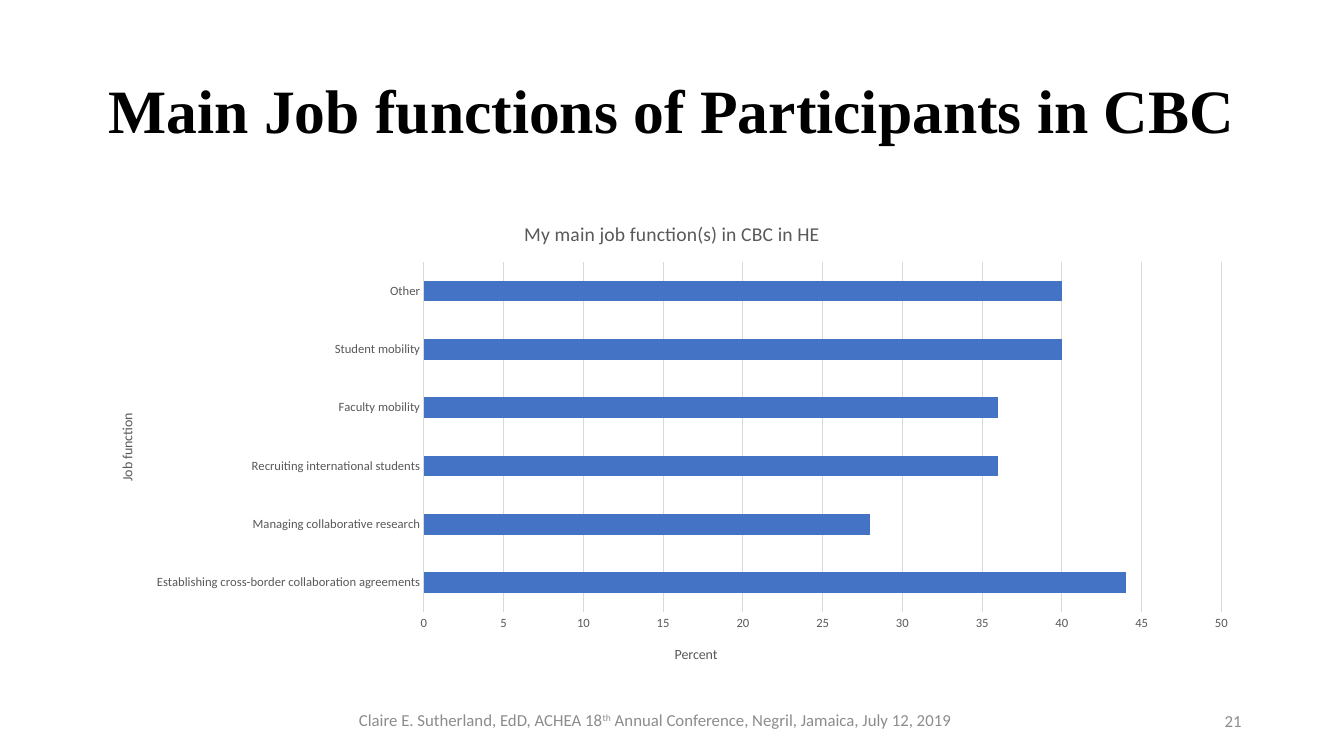
from dataclasses import dataclass

import pptx
import pptx.chart.data
import pptx.dml.color
import pptx.enum.chart
import pptx.enum.text
import pptx.oxml
import pptx.oxml.ns
import pptx.util

Pt = pptx.util.Pt
RGB = pptx.dml.color.RGBColor
Align = pptx.enum.text.PP_ALIGN
qn = pptx.oxml.ns.qn

BLACK = RGB(0x00, 0x00, 0x00)
INK = RGB(0x59, 0x59, 0x59)
GREY = RGB(0x8C, 0x8C, 0x8C)
GRID = RGB(0xD9, 0xD9, 0xD9)
BLUE = RGB(0x44, 0x72, 0xC4)

JOBS = {
    "Establishing cross-border collaboration agreements": 44,
    "Managing collaborative research": 28,
    "Recruiting international students": 36,
    "Faculty mobility": 36,
    "Student mobility": 40,
    "Other": 40,
}


@dataclass
class Label:
    text: str
    left: float
    top: float
    width: float
    height: float
    size: float
    font: str = "Calibri"
    color: RGB = GREY
    bold: bool = False
    align: Align = Align.CENTER
    inset: float = 3.6
    space: float = 1.0


LABELS = [
    Label("Main Job functions of Participants in CBC", 66, 28.8, 828, 104.4, 44,
          font="Times New Roman", color=BLACK, bold=True, space=0.9),
    Label("Claire E. Sutherland, EdD, ACHEA 18^th^ Annual Conference, "
          "Negril, Jamaica, July 12, 2019", 98, 484.6, 740, 44.6, 12, inset=18),
    Label("21", 678, 500.4, 216, 28.8, 12, align=Align.RIGHT),
]


def write(frame, text: str, *, size: float, font: str = "Calibri",
          color: RGB = INK, bold: bool = False,
          align: Align = Align.CENTER, space: float = 1.0) -> None:
    """Fill the first paragraph; text between carets is raised."""
    para = frame.paragraphs[0]
    para.alignment = align
    para.line_spacing = space
    for i, part in enumerate(text.split("^")):
        run = para.add_run()
        run.text = part
        run.font.size = Pt(size)
        run.font.name = font
        run.font.bold = bold
        run.font.color.rgb = color
        if i % 2:
            run._r.get_or_add_rPr().set("baseline", "30000")


def draw(slide, label: Label) -> None:
    box = slide.shapes.add_textbox(
        Pt(label.left), Pt(label.top), Pt(label.width), Pt(label.height))
    frame = box.text_frame
    frame.word_wrap = True
    frame.vertical_anchor = pptx.enum.text.MSO_ANCHOR.MIDDLE
    frame.margin_top = Pt(label.inset)
    write(frame, label.text, size=label.size, font=label.font, color=label.color,
          bold=label.bold, align=label.align, space=label.space)


def place(node, **parts: float) -> None:
    """Pin a chart part at fractions of the chart's size."""
    for old in node.findall(qn("c:layout")):
        node.remove(old)
    modes = {"xMode": "edge", "yMode": "edge"}
    if "w" in parts:
        modes = {"layoutTarget": "inner"} | modes
    body = "".join(f'<c:{tag} val="{val}"/>' for tag, val in (modes | parts).items())
    layout = pptx.oxml.parse_xml(
        f'<c:layout {pptx.oxml.ns.nsdecls("c")}>'
        f'<c:manualLayout>{body}</c:manualLayout></c:layout>')
    node.insert(0 if node.find(qn("c:tx")) is None else 1, layout)


def style(axis, title: str, x: float, y: float) -> None:
    write(axis.axis_title.text_frame, title, size=10)
    place(axis.axis_title._element, x=x, y=y)
    axis.major_tick_mark = pptx.enum.chart.XL_TICK_MARK.NONE
    axis.minor_tick_mark = pptx.enum.chart.XL_TICK_MARK.NONE
    font = axis.tick_labels.font
    font.size = Pt(9)
    font.name = "Calibri"
    font.color.rgb = INK


def rule(line) -> None:
    line.color.rgb = GRID
    line.width = Pt(0.75)


def plot(slide) -> None:
    data = pptx.chart.data.CategoryChartData(number_format="0")
    data.categories = list(JOBS)
    data.add_series("Series 1", list(JOBS.values()))
    chart = slide.shapes.add_chart(
        pptx.enum.chart.XL_CHART_TYPE.BAR_CLUSTERED,
        Pt(66), Pt(144), Pt(828), Pt(342.7), data).chart
    chart.font.name = "Calibri"
    chart.font.size = Pt(10)
    chart.has_legend = False
    write(chart.chart_title.text_frame, "My main job function(s) in CBC in HE", size=14)
    chart.chart_title.include_in_layout = False
    place(chart._chartSpace.chart.plotArea, x=0.286, y=0.126, w=0.688, h=0.729)

    bars = chart.plots[0]
    bars.gap_width = 182
    bars.vary_by_categories = False
    fill = bars.series[0].format.fill
    fill.solid()
    fill.fore_color.rgb = BLUE

    style(chart.category_axis, "Job function", 0.02, 0.436)
    rule(chart.category_axis.format.line)
    scale = chart.value_axis
    style(scale, "Percent", 0.5, 0.92)
    scale.minimum_scale, scale.maximum_scale, scale.major_unit = 0, 50, 5
    scale.format.line.fill.background()
    scale.has_major_gridlines = True
    rule(scale.major_gridlines.format.line)


def main() -> None:
    deck = pptx.Presentation()
    deck.slide_width, deck.slide_height = Pt(960), Pt(540)
    slide = deck.slides.add_slide(deck.slide_layouts[6])
    for label in LABELS:
        draw(slide, label)
    plot(slide)
    deck.save("out.pptx")


if __name__ == "__main__":
    main()
